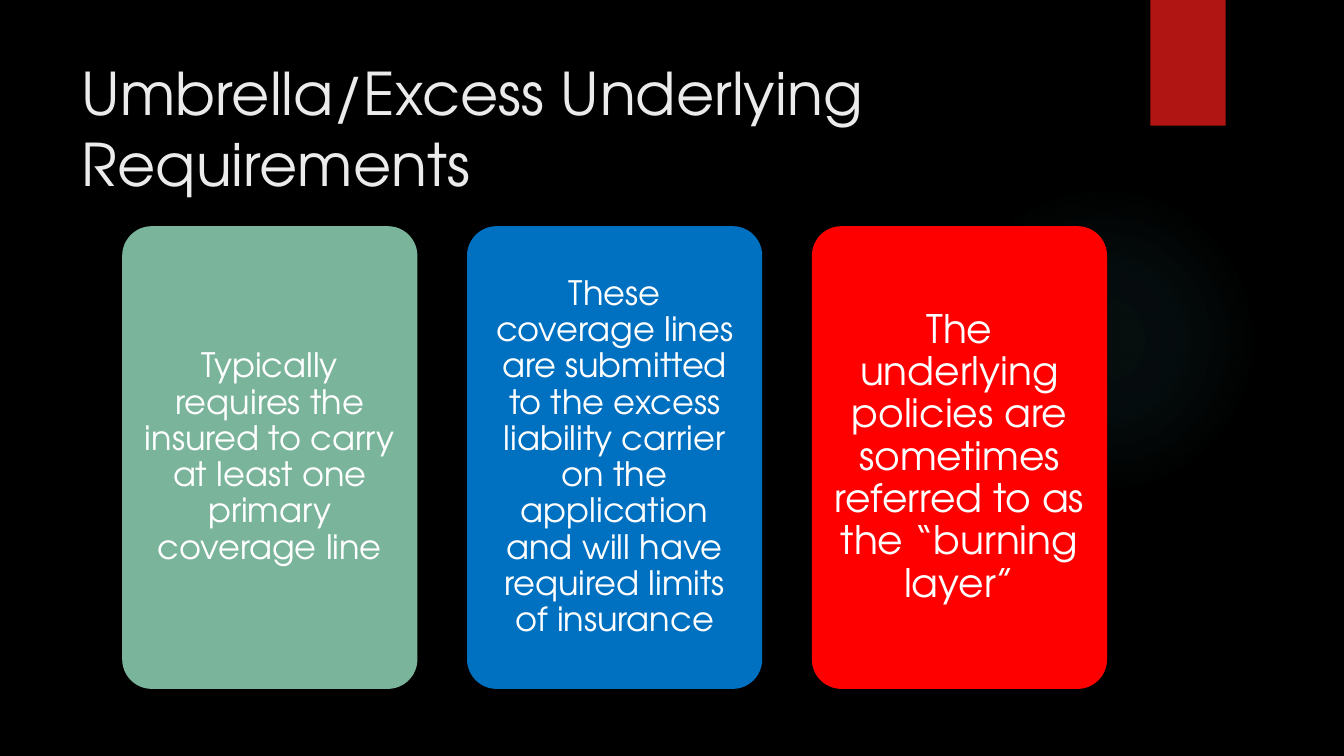
from dataclasses import dataclass

from lxml.etree import SubElement
from pptx import Presentation
from pptx.dml.color import RGBColor
from pptx.enum.shapes import MSO_SHAPE
from pptx.enum.text import MSO_ANCHOR, PP_ALIGN
from pptx.oxml.ns import qn
from pptx.util import Cm, Pt


@dataclass(frozen=True)
class Theme:
    font: str = "TeX Gyre Adventor"
    background: str = "000000"
    title: str = "EBEBEB"
    card_text: str = "FFFFFF"
    ribbon: str = "B01513"
    glow: str = "50B9C1"
    green: str = "79B49B"
    blue: str = "0070C0"
    red: str = "FF0000"
    title_size: int = 42
    card_size: int = 24
    large_card_size: int = 28


def write_text(shape, text, *, font, size, color, align=PP_ALIGN.LEFT,
               line_spacing=1.0, inset=(0.25, 0.13)):
    frame = shape.text_frame
    frame.word_wrap = True
    frame.vertical_anchor = MSO_ANCHOR.MIDDLE
    frame.margin_left = frame.margin_right = Cm(inset[0])
    frame.margin_top = frame.margin_bottom = Cm(inset[1])
    frame.text = text
    paragraph = frame.paragraphs[0]
    paragraph.alignment = align
    paragraph.line_spacing = line_spacing
    paragraph.space_before = Pt(0)
    paragraph.font.name = font
    paragraph.font.size = Pt(size)
    paragraph.font.color.rgb = RGBColor.from_string(color)


class SlideBuilder:
    def __init__(self, presentation, theme):
        self.theme = theme
        self.slide = presentation.slides.add_slide(presentation.slide_layouts[5])
        background = self.slide.background.fill
        background.solid()
        background.fore_color.rgb = RGBColor.from_string(theme.background)

    def title(self, text, left, top, width, height):
        title = self.slide.shapes.title
        title.left, title.top = Cm(left), Cm(top)
        title.width, title.height = Cm(width), Cm(height)
        write_text(title, text, font=self.theme.font,
                   size=self.theme.title_size, color=self.theme.title)

    def shape(self, kind, color, left, top, width, height):
        shape = self.slide.shapes.add_shape(
            kind, Cm(left), Cm(top), Cm(width), Cm(height))
        shape.shadow.inherit = False
        shape.line.fill.background()
        shape.fill.solid()
        shape.fill.fore_color.rgb = RGBColor.from_string(color)
        return shape

    def glow(self, left, top, diameter, stops):
        shape = self.shape(MSO_SHAPE.OVAL, self.theme.glow,
                           left, top, diameter, diameter)
        # Radial gradient with transparency
        shape.fill.gradient()
        gradient = shape._element.spPr.find(qn("a:gradFill"))
        for child in list(gradient):
            gradient.remove(child)
        stop_list = SubElement(gradient, qn("a:gsLst"))
        for position, opacity in stops:
            stop = SubElement(stop_list, qn("a:gs"), pos=str(position * 1000))
            color = SubElement(stop, qn("a:srgbClr"), val=self.theme.glow)
            SubElement(color, qn("a:alpha"), val=str(opacity * 1000))
        circle = SubElement(gradient, qn("a:path"), path="circle")
        SubElement(circle, qn("a:fillToRect"),
                   l="50000", t="50000", r="50000", b="50000")

    def card(self, text, color, size, inset, left, top, width, height):
        card = self.shape(MSO_SHAPE.ROUNDED_RECTANGLE, color,
                          left, top, width, height)
        card.adjustments[0] = 0.1
        write_text(card, text, font=self.theme.font, size=size,
                   color=self.theme.card_text, align=PP_ALIGN.CENTER,
                   line_spacing=0.9, inset=(inset, inset))


def main():
    presentation = Presentation()
    presentation.slide_width = Cm(33.87)
    presentation.slide_height = Cm(19.05)
    theme = Theme()
    builder = SlideBuilder(presentation, theme)

    # Backdrop
    builder.glow(23.9, 4.65, 7.82, [(0, 7), (36, 6), (69, 0)])
    builder.shape(MSO_SHAPE.RECTANGLE, theme.ribbon, 28.99, 0, 1.9, 3.17)

    # Title
    builder.title("Umbrella/Excess Underlying Requirements",
                  1.8, 1.27, 26.14, 3.89)

    # Row of cards
    cards = [
        ("Typically requires the insured to carry at least one primary "
         "coverage line", theme.green, theme.card_size, 0.25),
        ("These coverage lines are submitted to the excess liability carrier "
         "on the application and will have required limits of insurance",
         theme.blue, theme.card_size, 0.25),
        ("The underlying policies are sometimes referred to as the "
         "“burning layer”", theme.red, theme.large_card_size, 0.3),
    ]
    first_left, pitch = 3.08, 8.69
    for index, (text, color, size, inset) in enumerate(cards):
        builder.card(text, color, size, inset,
                     first_left + index * pitch, 5.7, 7.44, 11.66)

    presentation.save("out.pptx")


if __name__ == "__main__":
    main()
